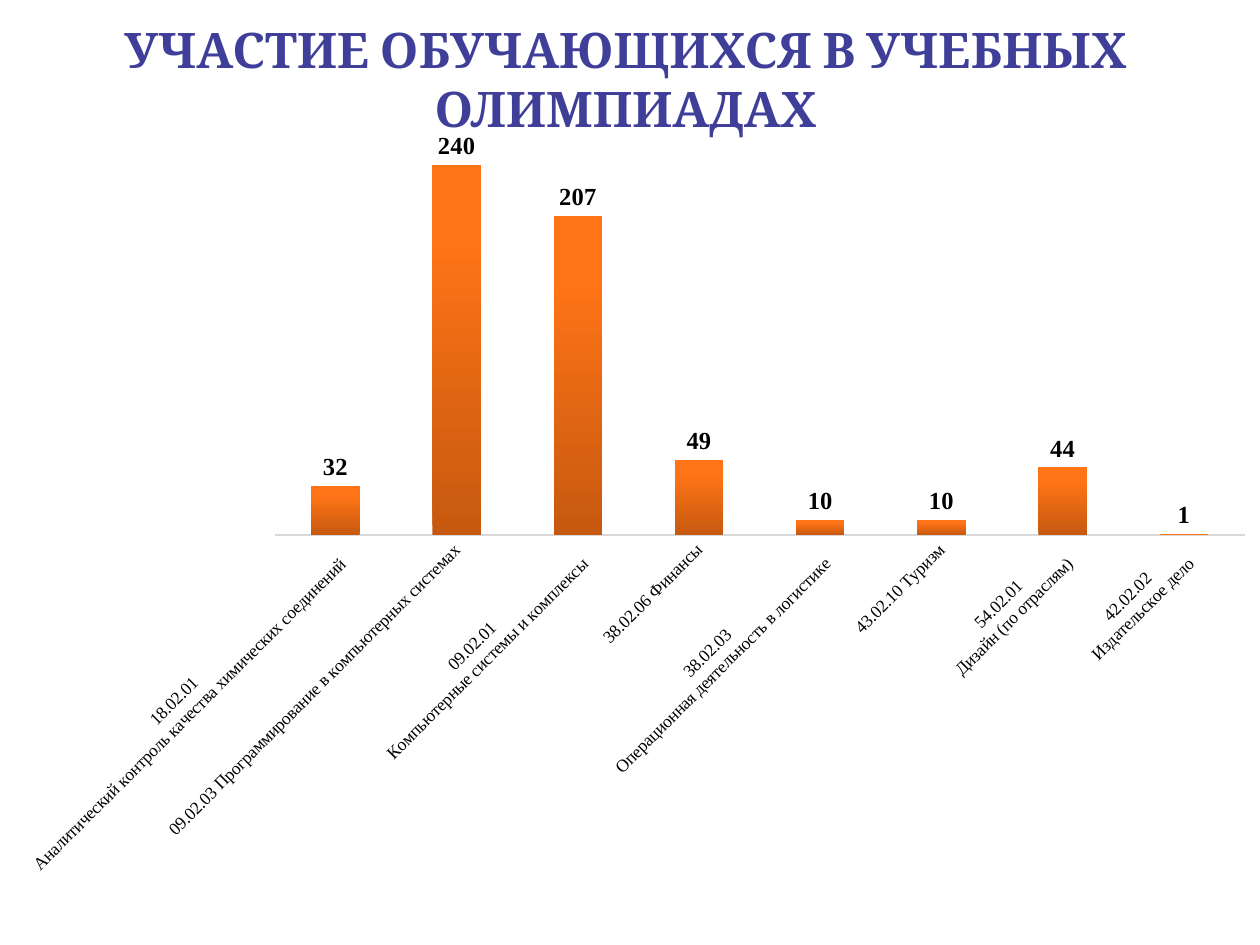
from dataclasses import dataclass

from lxml.etree import SubElement
from pptx import Presentation
from pptx.chart.data import CategoryChartData
from pptx.dml.color import RGBColor
from pptx.enum.chart import XL_CHART_TYPE, XL_LABEL_POSITION, XL_TICK_MARK
from pptx.enum.text import MSO_ANCHOR, PP_ALIGN
from pptx.oxml.ns import qn
from pptx.util import Cm, Pt


@dataclass(frozen=True)
class Theme:
    heading_font: str = "Cambria"
    chart_font: str = "Times New Roman"
    heading: RGBColor = RGBColor(0x3F, 0x3F, 0x9A)
    text: RGBColor = RGBColor(0, 0, 0)
    axis: RGBColor = RGBColor(0xD9, 0xD9, 0xD9)
    bar_bottom: RGBColor = RGBColor(0xC6, 0x59, 0x10)
    bar_top: RGBColor = RGBColor(0xFF, 0x74, 0x16)
    heading_size: Pt = Pt(28)
    value_size: Pt = Pt(14)
    category_size: Pt = Pt(10)


theme = Theme()

participants = {
    "18.02.01 \nАналитический контроль качества химических соединений": 32,
    "09.02.03 Программирование в компьютерных системах": 240,
    "09.02.01 \nКомпьютерные системы и комплексы": 207,
    "38.02.06 Финансы": 49,
    "38.02.03 \nОперационная деятельность в логистике": 10,
    "43.02.10 Туризм": 10,
    "54.02.01 \nДизайн (по отраслям)": 44,
    "42.02.02 \nИздательское дело": 1,
}


def set_font(font, name, size, color, bold=False):
    font.name, font.size, font.bold = name, size, bold
    font.color.rgb = color


presentation = Presentation()
presentation.slide_width, presentation.slide_height = Cm(25.4), Cm(19.05)
slide = presentation.slides.add_slide(presentation.slide_layouts[6])

# Heading
heading = slide.shapes.add_textbox(Cm(1.18), Cm(0), Cm(22.86), Cm(3.16)).text_frame
heading.word_wrap = True
heading.vertical_anchor = MSO_ANCHOR.MIDDLE
heading_line = heading.paragraphs[0]
heading_line.text = "УЧАСТИЕ ОБУЧАЮЩИХСЯ В УЧЕБНЫХ ОЛИМПИАДАХ"
heading_line.alignment = PP_ALIGN.CENTER
set_font(heading_line.font, theme.heading_font, theme.heading_size, theme.heading, True)

# Participants per speciality
chart_width, chart_height = Cm(25.81), Cm(16.87)
chart_data = CategoryChartData()
chart_data.categories = list(participants)
chart_data.add_series("Series 1", list(participants.values()))
chart = slide.shapes.add_chart(
    XL_CHART_TYPE.COLUMN_CLUSTERED, Cm(-0.2), Cm(1.09), chart_width, chart_height, chart_data
).chart
chart.has_legend = False
chart.has_title = False
set_font(chart.font, theme.chart_font, theme.category_size, theme.text)

# Plot area, as fractions of the chart
plot_area = chart.plots[0]._element.getparent()
layout = plot_area.find(qn("c:layout"))
if layout is None:
    layout = plot_area.makeelement(qn("c:layout"))
    plot_area.insert(0, layout)
manual_layout = SubElement(layout, qn("c:manualLayout"))
for setting, value in {
    "layoutTarget": "inner", "xMode": "edge", "yMode": "edge",
    "x": Cm(5.74) / chart_width, "y": Cm(1.92) / chart_height,
    "w": Cm(19.55) / chart_width, "h": Cm(7.78) / chart_height,
}.items():
    SubElement(manual_layout, qn(f"c:{setting}")).set("val", str(value))

# Axes
specialities = chart.category_axis
specialities.major_tick_mark = XL_TICK_MARK.NONE
specialities.format.line.color.rgb = theme.axis
specialities.format.line.width = Pt(1)
set_font(specialities.tick_labels.font, theme.chart_font, theme.category_size, theme.text)
label_body = specialities._element.find(qn("c:txPr")).find(qn("a:bodyPr"))
label_body.set("rot", str(-45 * 60000))
label_body.set("vert", "horz")
counts = chart.value_axis
counts.minimum_scale, counts.maximum_scale = 0, 250
counts.has_major_gridlines = False
counts.visible = False

# Bars
bars = chart.plots[0]
bars.gap_width, bars.overlap = 150, -25
bars.vary_by_categories = False
bar_fill = bars.series[0].format.fill
bar_fill.gradient()
bar_fill.gradient_angle = 90
shades = [(0, theme.bar_bottom), (0.8, theme.bar_top)]
for stop, (position, color) in zip(bar_fill.gradient_stops, shades):
    stop.position, stop.color.rgb = position, color

# Values above the bars
bars.has_data_labels = True
values = bars.data_labels
values.show_value = True
values.position = XL_LABEL_POSITION.OUTSIDE_END
set_font(values.font, theme.chart_font, theme.value_size, theme.text, True)

presentation.save("out.pptx")
